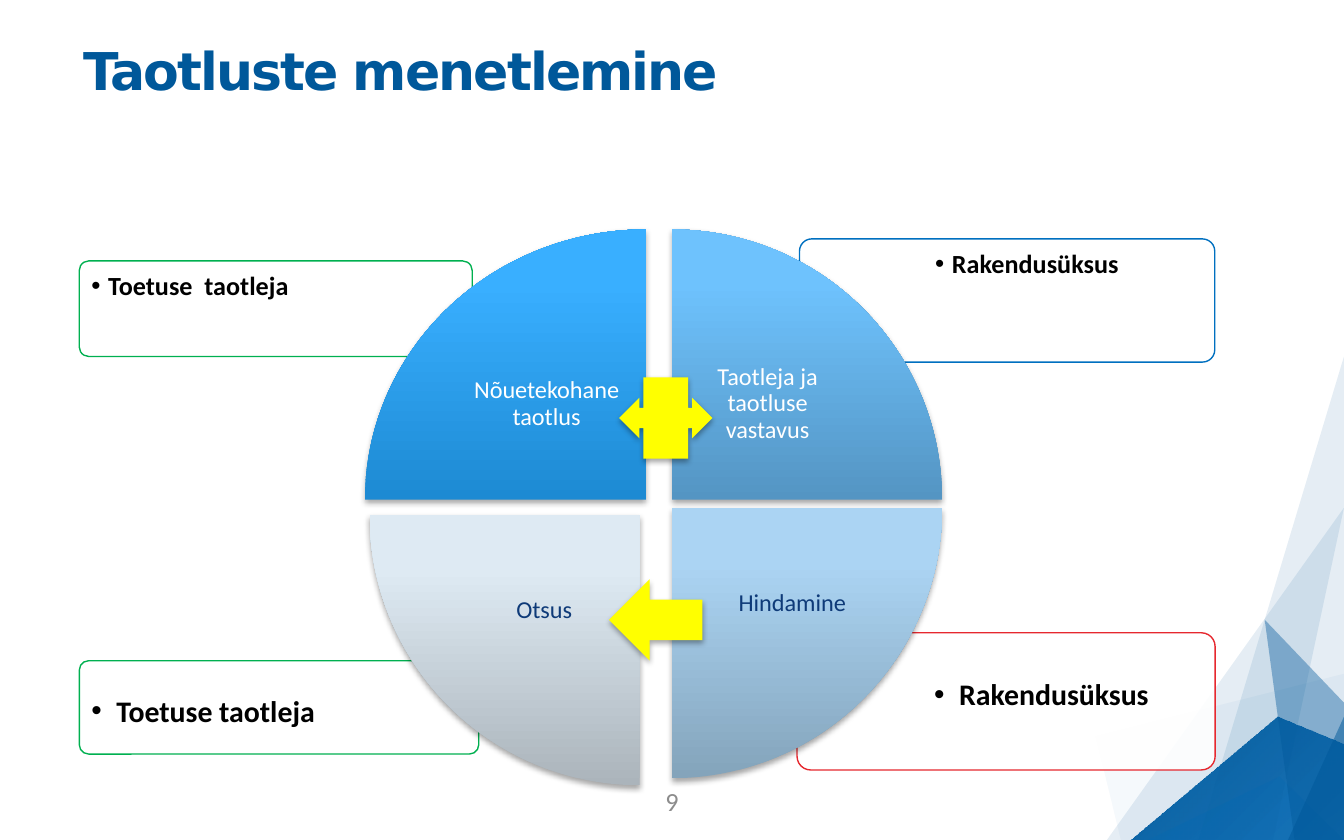
from lxml import etree
from pptx import Presentation
from pptx.dml.color import RGBColor
from pptx.enum.shapes import MSO_SHAPE
from pptx.enum.text import MSO_ANCHOR, PP_ALIGN
from pptx.oxml import parse_xml
from pptx.oxml.ns import nsdecls, qn
from pptx.util import Pt

ROUND = MSO_SHAPE.ROUNDED_RECTANGLE
WEDGE = MSO_SHAPE.PIE_WEDGE
CALLOUT = MSO_SHAPE.LEFT_RIGHT_ARROW_CALLOUT
ARROW = MSO_SHAPE.RIGHT_ARROW
TOP, MIDDLE = MSO_ANCHOR.TOP, MSO_ANCHOR.MIDDLE
LEFT, CENTER = PP_ALIGN.LEFT, PP_ALIGN.CENTER

NAVY, BLUE, YELLOW, WHITE, BLACK = "00589A", "0068B4", "FFFF00", "FFFFFF", "000000"
INK = "0E3A78"


def rgb(code):
    return RGBColor.from_string(code)


class Deck:
    body = "Calibri"
    head = "DejaVu Sans"

    def __init__(self, wide, high):
        self.prs = Presentation()
        self.prs.slide_width, self.prs.slide_height = Pt(wide), Pt(high)
        self.slide = self.prs.slides.add_slide(self.prs.slide_layouts[6])

    def paint(self, shape, code, alpha=100):
        shape.fill.solid()
        shape.fill.fore_color.rgb = rgb(code)
        if alpha < 100:
            tint = shape._element.spPr.find(qn("a:solidFill"))[0]
            etree.SubElement(tint, qn("a:alpha")).set("val", str(alpha * 1000))

    def blend(self, shape, stops, angle):
        """Fill with (place, colour, opacity) stops; the angle runs clockwise."""
        marks = "".join(
            f'<a:gs pos="{place * 1000}"><a:srgbClr val="{code}">'
            f'<a:alpha val="{alpha * 1000}"/></a:srgbClr></a:gs>'
            for place, code, alpha in stops)
        shape.fill.solid()
        spot = shape._element.spPr
        spot.replace(spot.find(qn("a:solidFill")), parse_xml(
            f'<a:gradFill {nsdecls("a")} rotWithShape="0"><a:gsLst>{marks}</a:gsLst>'
            f'<a:lin ang="{angle * 60000}" scaled="0"/></a:gradFill>'))

    def shade(self, shape):
        shape._element.spPr.find(qn("a:effectLst")).append(parse_xml(
            f'<a:outerShdw {nsdecls("a")} blurRad="{Pt(3.1)}" dist="{Pt(1.8)}" '
            'dir="5400000" rotWithShape="0"><a:srgbClr val="000000">'
            '<a:alpha val="35000"/></a:srgbClr></a:outerShdw>'))

    def shape(self, kind, box, turn=0):
        item = self.slide.shapes.add_shape(kind, *map(Pt, box))
        item.rotation = turn
        item.shadow.inherit = False
        item.line.fill.background()
        return item

    def facet(self, points):
        first, *rest = [(Pt(x), Pt(y)) for x, y in points]
        pen = self.slide.shapes.build_freeform(*first)
        pen.add_line_segments(rest, close=True)
        item = pen.convert_to_shape()
        item.shadow.inherit = False
        item.line.fill.background()
        return item

    def frame(self, box, code):
        item = self.shape(ROUND, box)
        item.adjustments[0] = 0.1
        self.paint(item, WHITE, 90)
        item.line.color.rgb = rgb(code)
        item.line.width = Pt(0.75)

    def wedge(self, box, turn, codes):
        item = self.shape(WEDGE, box, turn)
        self.blend(item, [(p, c, 100) for p, c in zip((0, 80, 100), codes)], 270)
        self.shade(item)

    def arrow(self, kind, box, turn=0):
        item = self.shape(kind, box, turn)
        self.paint(item, YELLOW)
        self.shade(item)

    def text(self, box, words, size, code, bold=False, align=CENTER, anchor=MIDDLE,
             pad=(7.2, 7.2, 7.2, 7.2), font=body, hang=0, lead=0.9, track=0):
        """Text box; hang is the bullet indent, track the letter spacing."""
        area = self.slide.shapes.add_textbox(*map(Pt, box)).text_frame
        area.word_wrap = True
        area.vertical_anchor = anchor
        (area.margin_left, area.margin_top,
         area.margin_right, area.margin_bottom) = map(Pt, pad)
        para = area.paragraphs[0]
        para.alignment = align
        para.line_spacing = lead
        if hang:
            props = para._p.get_or_add_pPr()
            props.set("marL", str(Pt(hang)))
            props.set("indent", str(-Pt(hang)))
            etree.SubElement(props, qn("a:buFont")).set("typeface", "Arial")
            etree.SubElement(props, qn("a:buChar")).set("char", "•")
        run = para.add_run()
        run.text = words
        run.font.name, run.font.size, run.font.bold = font, Pt(size), bold
        run.font.color.rgb = rgb(code)
        if track:
            run._r.get_or_add_rPr().set("spc", str(track * 100))


def main():
    deck = Deck(720, 450)

    peak = deck.facet([(684, 384), (720, 399), (720, 450), (605.5, 450)])
    deck.blend(peak, [(0, NAVY, 100), (100, BLUE, 84)], 45)
    facets = [
        (NAVY, 10, [(720, 191), (720, 450), (642, 450)]),
        (NAVY, 10, [(593, 450), (720, 272), (682, 450)]),
        (BLUE, 4, [(587, 394.5), (720, 361), (720, 433), (692, 450), (600.5, 450)]),
        (BLUE, 25, [(685.5, 416), (720, 450), (615, 450)]),
        (NAVY, 40, [(677.5, 332), (693.5, 450), (720, 450), (720, 376.5)]),
        (NAVY, 50, [(720, 384), (720, 450), (690, 450)]),
    ]
    for code, alpha, points in facets:
        deck.paint(deck.facet(points), code, alpha)

    deck.text((36, 18, 648, 75), "Taotluste menetlemine", 27.9, NAVY, True, LEFT, TOP,
              (8.6, 2.7, 8.6, 4.3), deck.head, lead=1, track=-1)
    deck.text((276, 417, 168, 24), "9", 14, "8C8C8C", pad=(8.6, 4.3, 8.6, 4.3), lead=1)

    # frame, line colour, text box, words, size, bullet indent
    roles = [
        ((427, 339, 224, 73.5), "E6282F", (495.4, 359.3, 153, 52), "Rakendusüksus", 16, 13.5),
        ((42.5, 354, 214, 50), "00B050", (43.9, 368, 148, 35), "Toetuse taotleja", 16, 13.5),
        ((428.3, 128, 222.5, 66), "0070C0", (496, 129.6, 153, 47), "Rakendusüksus", 14, 9),
        ((42.5, 139.8, 210.5, 51.2), "00B050", (43.9, 141, 145, 36), "Toetuse  taotleja", 14, 9),
    ]
    for box, code, area, words, size, hang in roles:
        deck.frame(box, code)
        deck.text(area, words, size, BLACK, True, LEFT, TOP, (5, 5, 5, 5), hang=hang)

    # wedge, turn, colours from bottom to top, text box, words, ink, left inset
    side, room = 144.7, 102.3
    steps = [
        ((195.5, 122.9, 150.5, side), 0, ("1D8AD3", "39AFFF", "3AB0FF"),
         (239.5, 165.3, 106.6, room), "Nõuetekohane taotlus", WHITE, 7.2),
        ((360, 122.9, side, side), 90, ("5495C3", "6EC2FD", "6EC3FF"),
         (360, 165.3, room, room), "Taotleja ja taotluse vastavus", WHITE, 7.2),
        ((360, 272.2, side, side), 180, ("84A4BB", "ABD4F3", "ABD6F5"),
         (360, 272.2, room, room), "Hindamine", INK, 33.5),
        ((198, 276, side, side), 270, ("ABB4BB", "DEEAF3", "DFEBF4"),
         (240.4, 276, room, room), "Otsus", INK, 7.2),
    ]
    for box, turn, codes, area, words, ink, inset in steps:
        deck.wedge(box, turn, codes)
        deck.text(area, words, 13, ink, pad=(inset, 7.2, 7.2, 7.2))

    deck.arrow(CALLOUT, (331.7, 202.2, 50, 43.5))
    deck.arrow(ARROW, (326.2, 310.3, 50, 43.5), 180)

    deck.prs.save("out.pptx")


if __name__ == "__main__":
    main()
